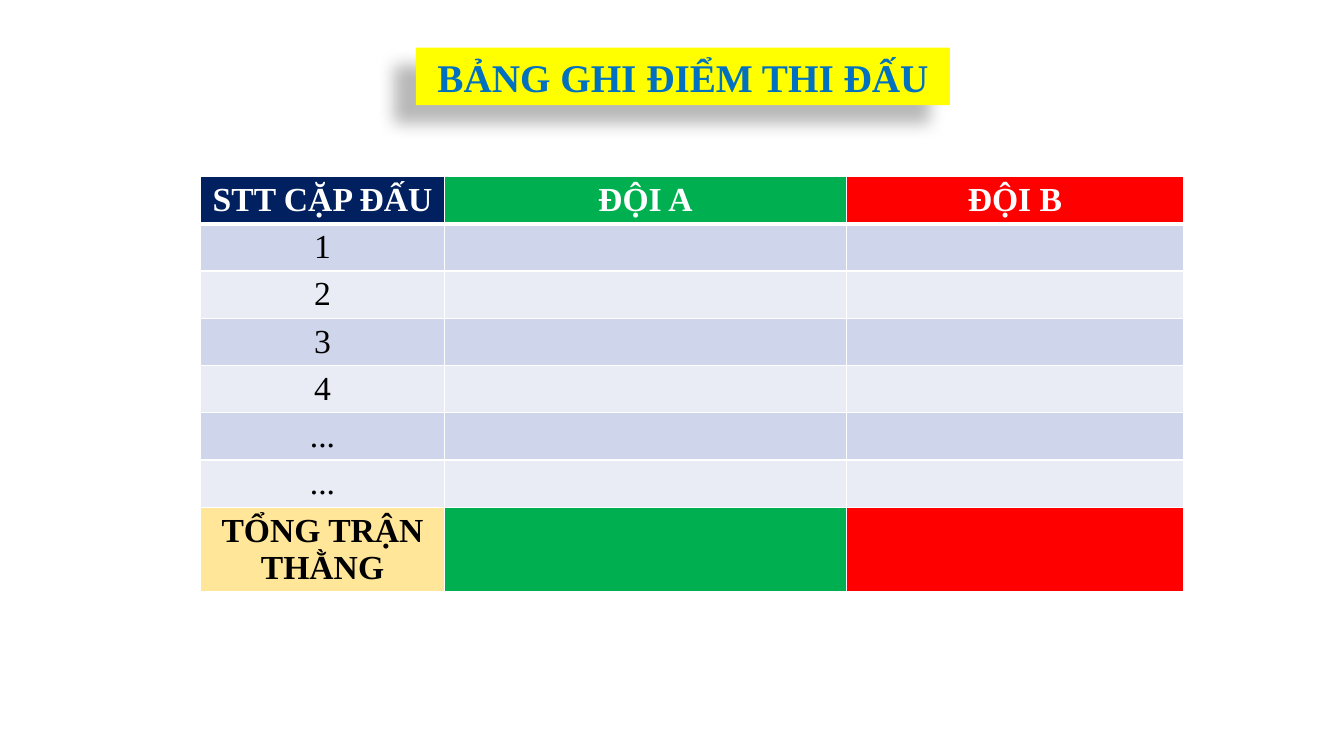
from lxml import etree
from pptx import Presentation
from pptx.dml.color import RGBColor
from pptx.enum import shapes, text
from pptx.oxml import ns
from pptx.util import Pt

# Content
TITLE = "BẢNG GHI ĐIỂM THI ĐẤU"
HEADS = ["STT CẶP ĐẤU", "ĐỘI A", "ĐỘI B"]
PAIRS = ["1", "2", "3", "4", "...", "..."]
TOTAL = "TỔNG TRẬN THẰNG"

# Style
FONT = "Times New Roman"
WHITE = RGBColor(0xFF, 0xFF, 0xFF)
BLACK = RGBColor(0, 0, 0)
NAVY = RGBColor(0x00, 0x20, 0x60)
GREEN = RGBColor(0x00, 0xB0, 0x50)
RED = RGBColor(0xFF, 0, 0)
CREAM = RGBColor(0xFF, 0xE6, 0x99)
YELLOW = RGBColor(0xFF, 0xFF, 0)
BLUE = RGBColor(0x00, 0x70, 0xC0)
BANDS = [RGBColor(0xCF, 0xD5, 0xEA), RGBColor(0xE9, 0xEB, 0xF5)]

# Layout
COLS = [174, 287.2, 240.8]
ROW = 29.5
LEFT, TOP = 143.4, 126


def add(parent, tag, **attrs):
    return etree.SubElement(parent, ns.qn("a:" + tag), **attrs)


def write(frame, words, size, color, bold):
    para = frame.paragraphs[0]
    para.alignment = text.PP_ALIGN.CENTER
    run = para.add_run()
    run.text = words
    font = run.font
    font.name, font.size, font.bold = FONT, Pt(size), bold
    font.color.rgb = color


def edge(cell, head, under):
    props = cell._tc.get_or_add_tcPr()
    wide = {"lnT": under, "lnB": head}
    for spot, tag in enumerate(["lnL", "lnR", "lnT", "lnB"]):
        line = etree.Element(ns.qn("a:" + tag), w=str(Pt(wide.get(tag, 1))))
        add(add(line, "solidFill"), "srgbClr", val=str(WHITE))
        props.insert(spot, line)


prs = Presentation()
prs.slide_width, prs.slide_height = Pt(960), Pt(540)
slide = prs.slides.add_slide(prs.slide_layouts[6])

# Score table
rows = [(HEADS, [NAVY, GREEN, RED], WHITE, True)]
for i, pair in enumerate(PAIRS):
    rows.append(([pair, "", ""], [BANDS[i % 2]] * 3, BLACK, False))
rows.append(([TOTAL, "", ""], [CREAM, GREEN, RED], BLACK, True))

grid = slide.shapes.add_table(len(rows), len(COLS), Pt(LEFT), Pt(TOP),
                              Pt(sum(COLS)), Pt(ROW * len(rows))).table
grid.horz_banding = False
for col, width in zip(grid.columns, COLS):
    col.width = Pt(width)
for r, (words, fills, color, bold) in enumerate(rows):
    grid.rows[r].height = Pt(ROW)
    for c, (word, fill) in enumerate(zip(words, fills)):
        cell = grid.cell(r, c)
        cell.fill.solid()
        cell.fill.fore_color.rgb = fill
        edge(cell, 3 if r == 0 else 1, 3 if r == 1 else 1)
        if word:
            write(cell.text_frame, word, 24, color, bold)

# Title banner with a soft shadow
banner = slide.shapes.add_shape(shapes.MSO_SHAPE.RECTANGLE,
                                Pt(297), Pt(34), Pt(381.6), Pt(41.2))
banner.fill.solid()
banner.fill.fore_color.rgb = YELLOW
banner.line.fill.background()
banner.shadow.inherit = False
glow = add(banner._element.spPr.find(ns.qn("a:effectLst")), "outerShdw",
           blurRad=str(Pt(11.8)), dist=str(Pt(19.7)),
           dir=str(141 * 60000), algn="ctr", rotWithShape="0")
add(add(glow, "srgbClr", val=str(BLACK)), "alpha", val="28000")
frame = banner.text_frame
frame.word_wrap = True
frame.auto_size = text.MSO_AUTO_SIZE.SHAPE_TO_FIT_TEXT
write(frame, TITLE, 28, BLUE, True)

prs.save("out.pptx")
